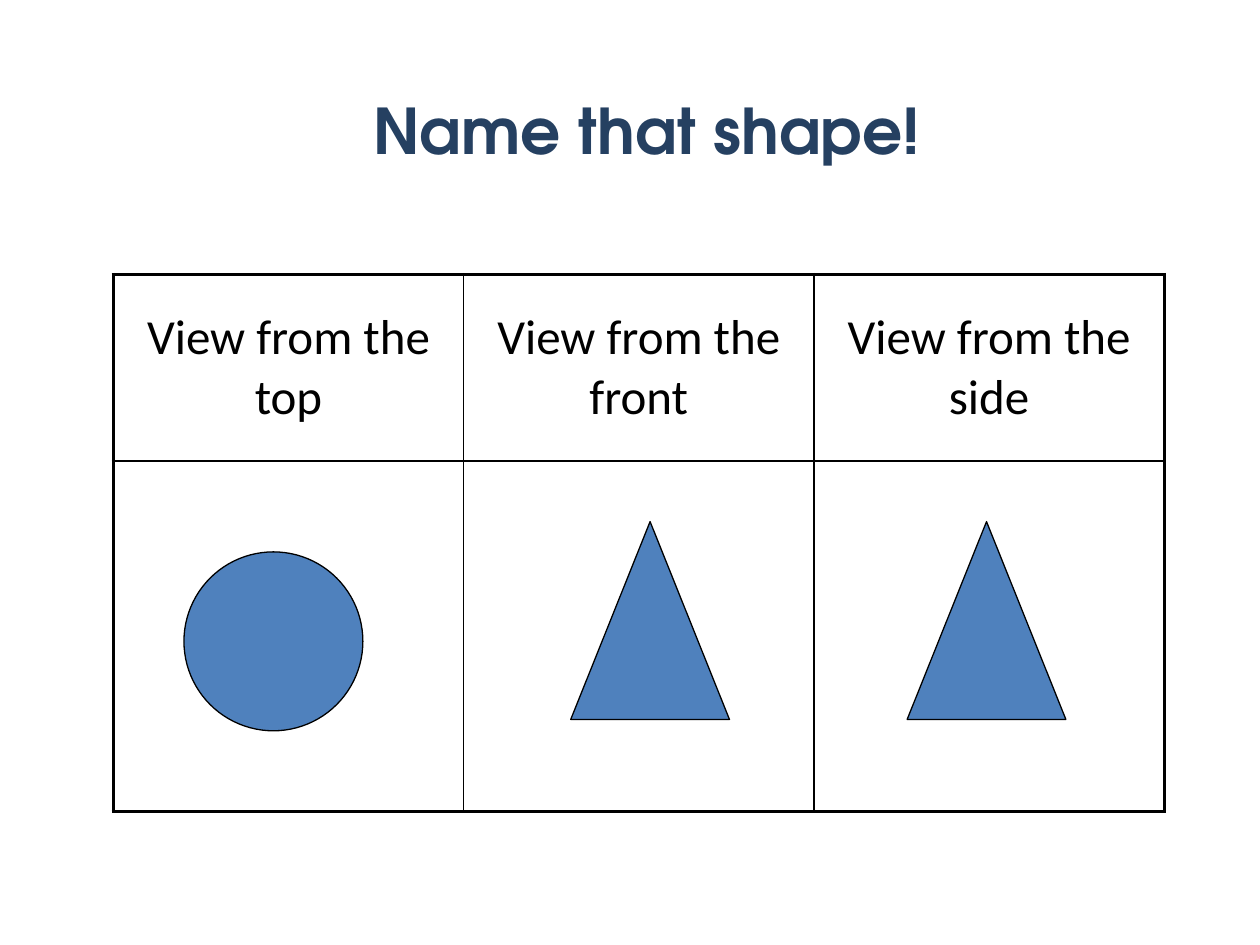
from lxml import etree
from pptx import Presentation
from pptx.dml.color import RGBColor
from pptx.enum.shapes import MSO_SHAPE
from pptx.enum.text import MSO_ANCHOR, PP_ALIGN
from pptx.oxml.ns import qn
from pptx.util import Inches, Pt

OVAL, CONE = MSO_SHAPE.OVAL, MSO_SHAPE.ISOSCELES_TRIANGLE
CENTER, MIDDLE = PP_ALIGN.CENTER, MSO_ANCHOR.MIDDLE

# Content
TITLE = "Name that shape!"
HEADS = ["View from the top", "View from the front", "View from the side"]
VIEWS = [  # kind, left, top, width, height
    (OVAL, 1.46, 4.38, 1.42, 1.42),
    (CONE, 4.53, 4.14, 1.26, 1.57),
    (CONE, 7.2, 4.14, 1.26, 1.57),
]

# Format
TITLE_FONT = {"name": "TeX Gyre Adventor", "size": Pt(36), "bold": True}
HEAD_FONT = {"name": "Calibri", "size": Pt(28), "bold": False}
INK, NAVY, BLUE = "000000", "254061", "4F81BD"
COL, ROWS = 2.78, [1.48, 2.78]
OUTER, INNER = 2.25, 1


def color(code):
    return RGBColor.from_string(code)


def write(frame, text, font, code):
    par = frame.paragraphs[0]
    par.alignment = CENTER
    run = par.add_run()
    run.text = text
    for name, value in font.items():
        setattr(run.font, name, value)
    run.font.color.rgb = color(code)
    return par


def border(cell, sides):
    props = cell._tc.get_or_add_tcPr()
    for side, outer in sides.items():
        width = Pt(OUTER if outer else INNER)
        line = etree.SubElement(props, qn("a:ln" + side), w=str(width))
        fill = etree.SubElement(line, qn("a:solidFill"))
        etree.SubElement(fill, qn("a:srgbClr"), val=INK)


prs = Presentation()
prs.slide_width, prs.slide_height = Inches(10), Inches(7.5)
slide = prs.slides.add_slide(prs.slide_layouts[6])
shapes = slide.shapes

# Table of views
cols, rows = len(HEADS), len(ROWS)
table = shapes.add_table(rows, cols, Inches(0.9), Inches(2.18),
                         Inches(COL * cols), Inches(sum(ROWS))).table
table.first_row = table.horz_banding = False
for col in table.columns:
    col.width = Inches(COL)
for r, height in enumerate(ROWS):
    table.rows[r].height = Inches(height)
    for c in range(cols):
        cell = table.cell(r, c)
        border(cell, {"L": c == 0, "R": c == cols - 1,
                      "T": r == 0, "B": r == rows - 1})
        cell.fill.background()
        cell.vertical_anchor = MIDDLE
for c, head in enumerate(HEADS):
    par = write(table.cell(0, c).text_frame, head, HEAD_FONT, INK)
    par.space_before = Pt(5.6)

# Shape seen in each view
for kind, *place in VIEWS:
    shape = shapes.add_shape(kind, *map(Inches, place))
    shape.shadow.inherit = False
    shape.fill.solid()
    shape.fill.fore_color.rgb = color(BLUE)
    shape.line.color.rgb = color(INK)
    shape.line.width = Pt(0.75)

# Title
box = shapes.add_textbox(Inches(2.38), Inches(0.68), Inches(5.51), Inches(0.71))
box.text_frame.word_wrap = False
write(box.text_frame, TITLE, TITLE_FONT, NAVY)

prs.save("out.pptx")
